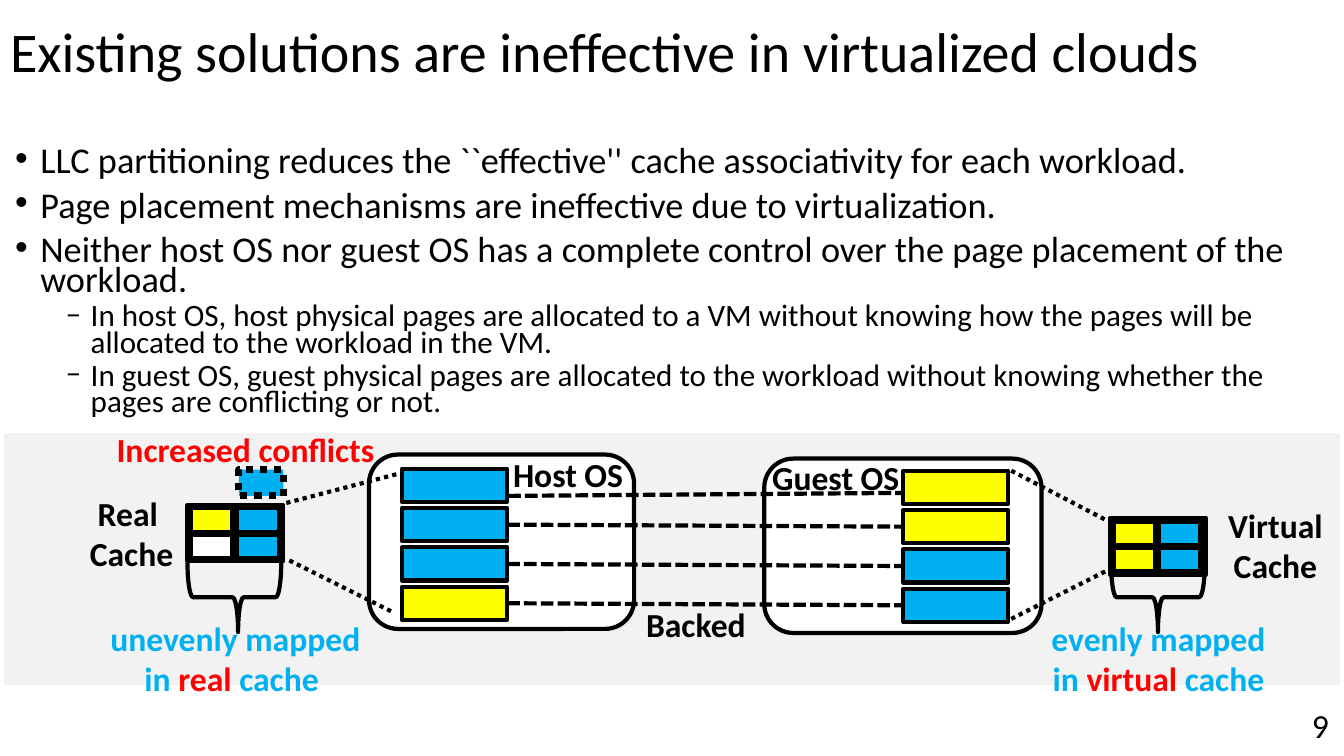
import pptx
import pptx.util
import pptx.dml.color
import pptx.enum.dml
import pptx.enum.shapes
import pptx.enum.text
import pptx.oxml.ns
import lxml.etree

Inches = pptx.util.Inches
Pt = pptx.util.Pt
Shape = pptx.enum.shapes.MSO_SHAPE
Dash = pptx.enum.dml.MSO_LINE
Align = pptx.enum.text.PP_ALIGN
Anchor = pptx.enum.text.MSO_ANCHOR
qn = pptx.oxml.ns.qn

COLORS = {"black": "000000", "white": "FFFFFF", "band": "F2F2F2",
          "yellow": "FFFF00", "blue": "00B0F0", "red": "FF0000"}

deck = pptx.Presentation()
deck.slide_width, deck.slide_height = Inches(13.33), Inches(7.5)
page = deck.slides.add_slide(deck.slide_layouts[1])


def write(box, paragraphs, size, bold=False, align=Align.LEFT, anchor=Anchor.TOP):
    """Fill a box with paragraphs, each a list of (words, color) runs."""
    frame = box.text_frame
    frame.word_wrap = True
    frame.auto_size = pptx.enum.text.MSO_AUTO_SIZE.NONE
    frame.vertical_anchor = anchor
    for index, runs in enumerate(paragraphs):
        para = frame.paragraphs[0] if index == 0 else frame.add_paragraph()
        para.alignment = align
        for words, color in runs:
            span = para.add_run()
            span.text = words
            span.font.name = "Calibri"
            span.font.size = Pt(size)
            span.font.bold = bold
            span.font.color.rgb = pptx.dml.color.RGBColor.from_string(COLORS[color])


def block(kind, left, top, width, height, fill=None, width_pt=3, line="black"):
    shape = page.shapes.add_shape(kind, Inches(left), Inches(top), Inches(width), Inches(height))
    shape.shadow.inherit = False
    if fill:
        shape.fill.solid()
        shape.fill.fore_color.rgb = pptx.dml.color.RGBColor.from_string(COLORS[fill])
    else:
        shape.fill.background()
    shape.line.color.rgb = pptx.dml.color.RGBColor.from_string(COLORS[line])
    shape.line.width = Pt(width_pt)
    return shape


# Title
title = page.shapes.title
title.left, title.top, title.width, title.height = 0, 0, Inches(13.33), Inches(1.08)
write(title, [[("Existing solutions are ineffective in virtualized clouds", "black")]],
      40, anchor=Anchor.MIDDLE)
title.text_frame.paragraphs[0].line_spacing = 0.9

# Bullet list
points = [
    (0, "LLC partitioning reduces the ``effective'' cache associativity for each workload."),
    (0, "Page placement mechanisms are ineffective due to virtualization."),
    (0, "Neither host OS nor guest OS has a complete control over the page placement of the workload."),
    (1, "In host OS, host physical pages are allocated to a VM without knowing how the pages will be "
        "allocated to the workload in the VM."),
    (1, "In guest OS, guest physical pages are allocated to the workload without knowing whether the "
        "pages are conflicting or not."),
]
body = page.placeholders[1]
body.left, body.top, body.width, body.height = Inches(0.05), Inches(1.43), Inches(13.23), Inches(2.88)
write(body, [[(words, "black")] for level, words in points], 25.9)
for para, (level, words) in zip(body.text_frame.paragraphs, points):
    para.level = level
    para.line_spacing = 0.7
    para.space_before = Pt((10, 5)[level])
    para.runs[0].font.size = Pt((25.9, 22.2)[level])
    settings = para._p.get_or_add_pPr()
    settings.set("marL", str(Inches((0.25, 0.75)[level])))
    settings.set("indent", str(Inches(-0.25)))
    lxml.etree.SubElement(settings, qn("a:buFont")).set("typeface", ("Arial", "Calibri")[level])
    lxml.etree.SubElement(settings, qn("a:buChar")).set("char", "•‒"[level])

# Grey band and the two operating systems with their pages
block(Shape.RECTANGLE, 0.05, 4.3, 13.23, 2.49, "band", 1, "band")
systems = [
    ((3.66, 4.51, 2.63, 1.73), 3.99, 4.65, ("blue", "blue", "blue", "yellow")),
    ((7.58, 4.55, 2.75, 1.73), 8.96, 4.67, ("yellow", "yellow", "blue", "blue")),
]
columns = []
for outline, left, top, fills in systems:
    block(Shape.ROUNDED_RECTANGLE, *outline, "white")
    columns.append([block(Shape.RECTANGLE, left, top + 0.39 * row, 1.04, 0.33, fill)
                    for row, fill in enumerate(fills)])
host_pages, guest_pages = columns

# Caches: frame, two by two cells, brace
caches = [
    (1.86, 5.01, 0.46, ("yellow", "blue", "white", "blue"), 1.98, 0.54),
    (11.01, 5.14, 0.45, ("yellow", "blue", "yellow", "blue"), 11.14, 0.5),
]
for left, top, step, fills, brace_left, tip in caches:
    block(Shape.RECTANGLE, left, top, 0.95, 0.56)
    for index, fill in enumerate(fills):
        row, column = divmod(index, 2)
        block(Shape.RECTANGLE, left + 0.02 + step * column, top + 0.02 + 0.26 * row,
              0.44, 0.26, fill, 5)
    brace = block(Shape.LEFT_BRACE, brace_left, 5.46, 0.69, 0.93)
    brace.rotation = 270
    brace.adjustments[0], brace.adjustments[1] = 0.08, tip
conflict = block(Shape.RECTANGLE, 2.37, 4.66, 0.44, 0.26, "blue", 5)
conflict.line.dash_style = Dash.ROUND_DOT

# Dotted zoom lines and dashed page mappings
dotted, dashed = Dash.ROUND_DOT, Dash.SQUARE_DOT
links = [
    (2.84, 4.99, 3.95, 4.7, dotted, None), (2.87, 5.56, 3.91, 6.08, dotted, None),
    (10.03, 4.67, 10.99, 5.17, dotted, None), (10.03, 6.14, 11.02, 5.64, dotted, None),
    (5.04, 4.92, 8.95, 4.89, dashed, None),
]
links += [(5.03, 4.82 + 0.39 * row, 8.96, 4.84 + 0.39 * row, dashed, row) for row in (1, 2, 3)]
for x1, y1, x2, y2, dash, row in links:
    link = page.shapes.add_connector(pptx.enum.shapes.MSO_CONNECTOR.STRAIGHT,
                                     Inches(x1), Inches(y1), Inches(x2), Inches(y2))
    link.line.color.rgb = pptx.dml.color.RGBColor.from_string(COLORS["black"])
    link.line.width = Pt(3)
    link.line.dash_style = dash
    lxml.etree.SubElement(link._element.spPr, qn("a:effectLst"))
    if row is not None:
        link.begin_connect(host_pages[row], 3)
        link.end_connect(guest_pages[row], 1)

# Labels
labels = [
    (4.99, 4.45, 1.33, 0.5, Align.LEFT, [[("Host OS", "black")]]),
    (7.56, 4.48, 1.52, 0.5, Align.LEFT, [[("Guest OS", "black")]]),
    (6.31, 5.94, 1.23, 0.5, Align.LEFT, [[("Backed", "black")]]),
    (0.75, 4.84, 1.11, 0.91, Align.CENTER, [[("Real ", "black")], [("Cache", "black")]]),
    (12.03, 4.96, 1.24, 0.91, Align.CENTER, [[("Virtual", "black")], [("Cache", "black")]]),
    (0.92, 6.08, 2.83, 0.91, Align.CENTER,
     [[("unevenly mapped in ", "blue"), ("real", "red"), (" cache ", "blue")]]),
    (10.2, 6.08, 2.58, 0.91, Align.CENTER,
     [[("evenly mapped in ", "blue"), ("virtual", "red"), (" cache", "blue")]]),
    (1.03, 4.21, 2.81, 0.5, Align.CENTER, [[("Increased conflicts", "red")]]),
]
for left, top, width, height, align, paragraphs in labels:
    box = page.shapes.add_textbox(Inches(left), Inches(top), Inches(width), Inches(height))
    write(box, paragraphs, 24, True, align)

# Page number
number = page.shapes.add_textbox(Inches(12.78), Inches(6.99), Inches(0.5), Inches(0.4))
write(number, [[("9", "black")]], 24, align=Align.RIGHT, anchor=Anchor.MIDDLE)

deck.save("out.pptx")
